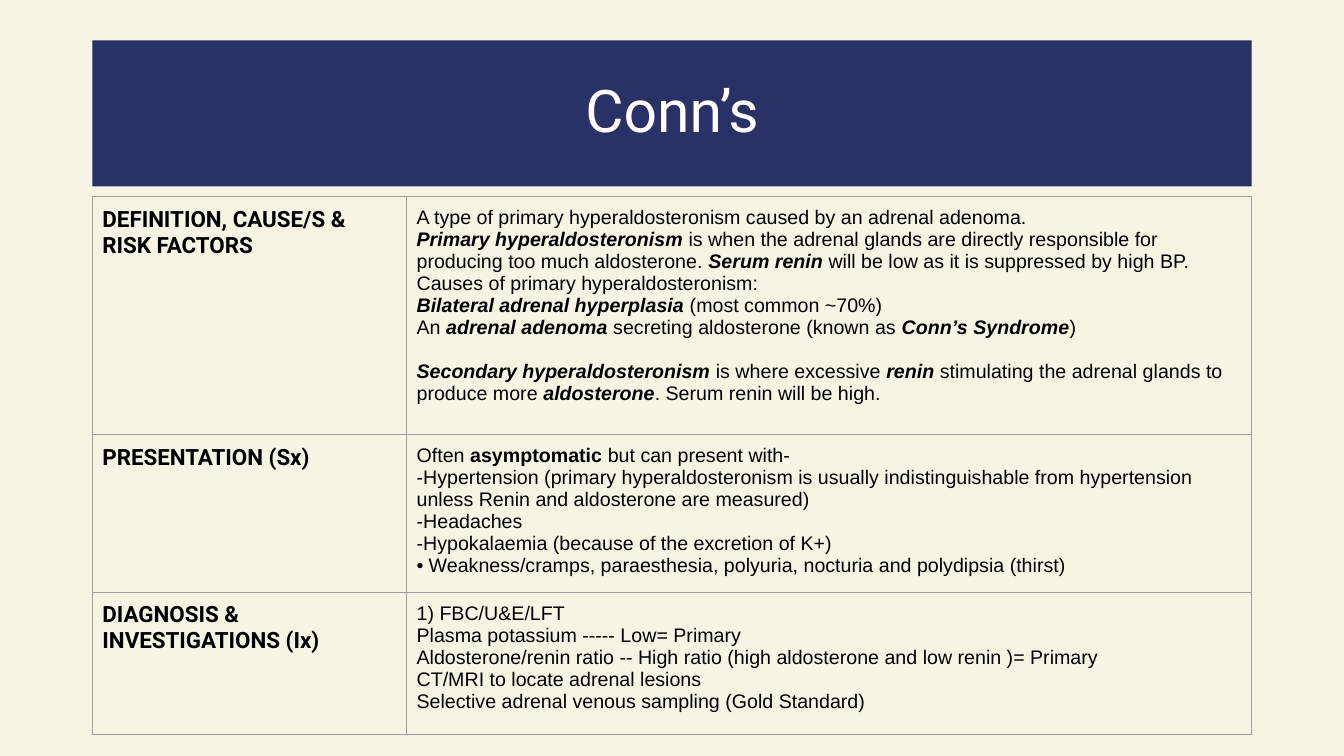
import pptx
import pptx.dml.color
import pptx.enum.shapes
import pptx.enum.text
import pptx.oxml
import pptx.oxml.ns
import pptx.util

COLORS = {"cream": "F8F4E4", "navy": "293267", "white": "FFFFFF",
          "black": "000000", "rule": "9E9E9E"}
GRID_COLUMNS, GRID_ROWS = 160, 90
LEFT, WIDTH = 11, 138
TOPIC_WIDTH = 37.4
LINE_GAP = 15.7

SECTIONS = [
    ("DEFINITION, CAUSE/S & RISK FACTORS", 28.3, [
        "A type of primary hyperaldosteronism caused by an adrenal adenoma.",
        "*Primary hyperaldosteronism* is when the adrenal glands are directly responsible for "
        "producing too much aldosterone. *Serum renin* will be low as it is suppressed by "
        "high BP. Causes of primary hyperaldosteronism:",
        "*Bilateral adrenal hyperplasia* (most common ~70%)",
        "An *adrenal adenoma* secreting aldosterone (known as *Conn’s Syndrome*)",
        "*Secondary hyperaldosteronism* is where excessive *renin* stimulating the adrenal "
        "glands to produce more *aldosterone*. Serum renin will be high.",
    ]),
    ("PRESENTATION (Sx)", 18.8, [
        "Often *asymptomatic* but can present with-",
        "-Hypertension (primary hyperaldosteronism is usually indistinguishable from "
        "hypertension unless Renin and aldosterone are measured)",
        "-Headaches",
        "-Hypokalaemia (because of the excretion of K+)",
        "• Weakness/cramps, paraesthesia, polyuria, nocturia and polydipsia (thirst)",
    ]),
    ("DIAGNOSIS & INVESTIGATIONS (Ix)", 16.9, [
        "1) FBC/U&E/LFT",
        "Plasma potassium ----- Low= Primary",
        "Aldosterone/renin ratio -- High ratio (high aldosterone and low renin )= Primary",
        "CT/MRI to locate adrenal lesions",
        "Selective adrenal venous sampling (Gold Standard)",
    ]),
]


class Sheet:
    """Holds the style and the current slide, measured on a 160 by 90 grid."""

    def __init__(self, deck):
        self.column = deck.slide_width / GRID_COLUMNS
        self.row = deck.slide_height / GRID_ROWS
        self.slide = deck.slides.add_slide(deck.slide_layouts[6])
        self.fill(self.slide.background.fill, "cream")

    def box(self, left, top, width, height):
        return (round(left * self.column), round(top * self.row),
                round(width * self.column), round(height * self.row))

    def fill(self, fill, color):
        fill.solid()
        fill.fore_color.rgb = pptx.dml.color.RGBColor.from_string(COLORS[color])

    def font(self, font, name, size, color, bold=False, italic=False):
        font.name, font.size = name, pptx.util.Pt(size)
        font.bold, font.italic = bold, italic
        font.color.rgb = pptx.dml.color.RGBColor.from_string(COLORS[color])

    def banner(self, title, *place):
        banner = self.slide.shapes.add_shape(
            pptx.enum.shapes.MSO_SHAPE.RECTANGLE, *self.box(*place))
        banner.shadow.inherit = False
        self.fill(banner.fill, "navy")
        banner.line.fill.background()
        frame = banner.text_frame
        frame.text = title
        frame.vertical_anchor = pptx.enum.text.MSO_ANCHOR.MIDDLE
        heading = frame.paragraphs[0]
        heading.alignment = pptx.enum.text.PP_ALIGN.CENTER
        heading.line_spacing = 0.9
        self.font(heading.runs[0].font, "Roboto", 42, "white")

    def table(self, heights, widths, left, top):
        place = self.box(left, top, sum(widths), sum(heights))
        table = self.slide.shapes.add_table(len(heights), len(widths), *place).table
        table.first_row = table.horz_banding = False
        for column, width in zip(table.columns, widths):
            column.width = round(width * self.column)
        for row, height in zip(table.rows, heights):
            row.height = round(height * self.row)
        for cell in table.iter_cells():
            self.frame_cell(cell)
        return table

    def frame_cell(self, cell):
        inset = pptx.util.Inches(0.1)
        cell.margin_left = cell.margin_right = inset
        cell.margin_top = cell.margin_bottom = inset
        properties = cell._tc.get_or_add_tcPr()
        for side in ("lnL", "lnR", "lnT", "lnB"):
            properties.append(pptx.oxml.parse_xml(
                f'<a:{side} {pptx.oxml.ns.nsdecls("a")} w="9525"><a:solidFill>'
                f'<a:srgbClr val="{COLORS["rule"]}"/></a:solidFill></a:{side}>'))
        cell.fill.background()

    def topic(self, cell, text):
        cell.text_frame.text = text
        self.font(cell.text_frame.paragraphs[0].runs[0].font, "Roboto", 16, "black", bold=True)

    def notes(self, cell, lines, italic):
        frame = cell.text_frame
        frame.text = "\n".join([""] * len(lines))
        for paragraph, line in zip(frame.paragraphs, lines):
            if line.startswith("• "):
                self.bullet(paragraph)
                line = line[2:]
            for index, part in enumerate(line.split("*")):
                if part:
                    run = paragraph.add_run()
                    run.text = part
                    strong = index % 2 == 1
                    self.font(run.font, "Arial", 14, "black", strong, strong and italic)
        return frame.paragraphs

    def bullet(self, paragraph):
        indent = pptx.util.Inches(0.12)
        properties = paragraph._p.get_or_add_pPr()
        properties.set("marL", str(indent))
        properties.set("indent", str(-indent))
        properties.append(pptx.oxml.parse_xml(
            f'<a:buFont {pptx.oxml.ns.nsdecls("a")} typeface="Arial"/>'))
        properties.append(pptx.oxml.parse_xml(
            f'<a:buChar {pptx.oxml.ns.nsdecls("a")} char="•"/>'))


def main():
    deck = pptx.Presentation()
    deck.slide_width = pptx.util.Inches(13.333)
    deck.slide_height = pptx.util.Inches(7.5)
    sheet = Sheet(deck)
    sheet.banner("Conn’s", LEFT, 4.8, WIDTH, 17.4)
    heights = [height for _, height, _ in SECTIONS]
    summary = sheet.table(heights, [TOPIC_WIDTH, WIDTH - TOPIC_WIDTH], LEFT, 23.4)
    for index, (topic, _, lines) in enumerate(SECTIONS):
        sheet.topic(summary.cell(index, 0), topic)
        notes = sheet.notes(summary.cell(index, 1), lines, italic=index == 0)
        if index == 0:
            notes[-1].space_before = pptx.util.Pt(LINE_GAP)
    deck.save("out.pptx")


if __name__ == "__main__":
    main()
